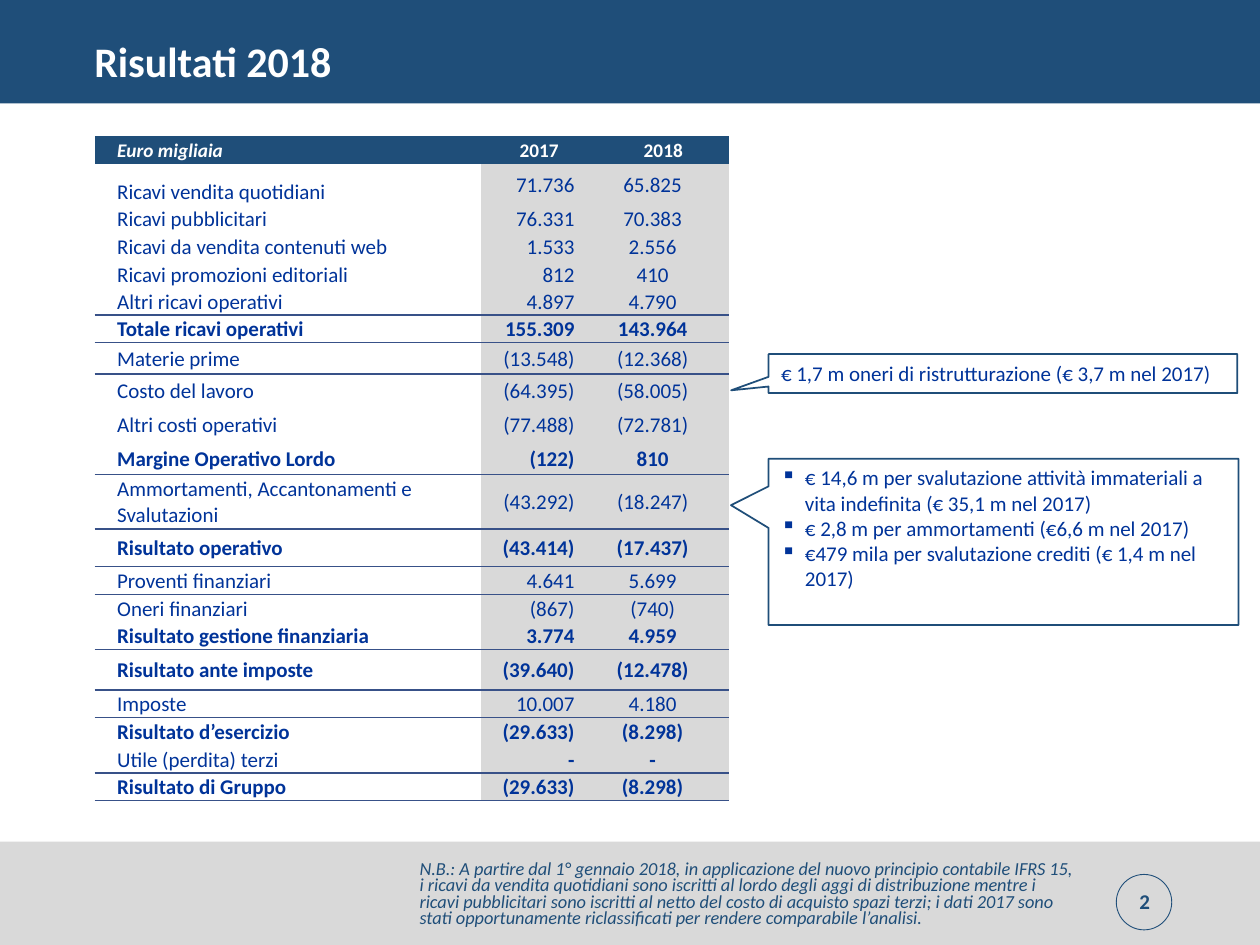
from typing import NamedTuple

import pptx
import pptx.dml.color
import pptx.enum.shapes
import pptx.enum.text
import pptx.oxml
import pptx.oxml.ns
import pptx.util
from pptx.util import Inches

RGBColor = pptx.dml.color.RGBColor
Align = pptx.enum.text.PP_ALIGN
Anchor = pptx.enum.text.MSO_ANCHOR
Shape = pptx.enum.shapes.MSO_SHAPE

NAVY = RGBColor(0x1F, 0x4E, 0x79)
BLUE = RGBColor(0x00, 0x33, 0x99)
RULE = RGBColor(0x38, 0x51, 0x88)
GREY = RGBColor(0xD9, 0xD9, 0xD9)
WHITE = RGBColor(0xFF, 0xFF, 0xFF)
FONT = "Calibri"
NO_STYLE = "{2D5ABB26-0587-4C30-8999-92F81FD0307C}"


class Box(NamedTuple):
    left: float
    top: float
    width: float
    height: float

    def lengths(self) -> list:
        return [Inches(value) for value in self]


class Entry(NamedTuple):
    label: str
    y2017: str
    y2018: str
    height: float = 0.22
    bold: bool = False
    ruled: bool = False  # line under the row
    bold_values: bool = False


class Callout(NamedTuple):
    box: Box
    tip: tuple
    lines: list
    bulleted: bool


ENTRIES = [
    Entry("Ricavi vendita quotidiani", "71.736", "65.825", 0.33),
    Entry("Ricavi pubblicitari", "76.331", "70.383"),
    Entry("Ricavi da vendita contenuti web", "1.533", "2.556"),
    Entry("Ricavi promozioni editoriali", "812", "410"),
    Entry("Altri ricavi operativi", "4.897", "4.790", 0.21, ruled=True),
    Entry("Totale ricavi operativi", "155.309", "143.964", bold=True, ruled=True),
    Entry("Materie prime", "(13.548)", "(12.368)", 0.25),
    Entry("Costo del lavoro", "(64.395)", "(58.005)", 0.27),
    Entry("Altri costi operativi", "(77.488)", "(72.781)", 0.27),
    Entry("Margine Operativo Lordo", "(122)", "810", 0.26, True, True),
    Entry("Ammortamenti, Accantonamenti e Svalutazioni", "(43.292)", "(18.247)", 0.43, ruled=True),
    Entry("Risultato operativo", "(43.414)", "(17.437)", 0.3, True, True),
    Entry("Proventi finanziari", "4.641", "5.699"),
    Entry("Oneri finanziari", "(867)", "(740)"),
    Entry("Risultato gestione finanziaria", "3.774", "4.959", bold=True, ruled=True),
    Entry("Risultato ante imposte", "(39.640)", "(12.478)", 0.32, True, True),
    Entry("Imposte", "10.007", "4.180"),
    Entry("Risultato d’esercizio", "(29.633)", "(8.298)", bold=True),
    Entry("Utile (perdita) terzi", "-", "-", ruled=True, bold_values=True),
    Entry("Risultato di Gruppo", "(29.633)", "(8.298)", bold=True, ruled=True),
]

CALLOUTS = [
    Callout(Box(6.1, 3.64, 3.73, 1.32), (-0.58, -0.22), [
        "€ 14,6 m per svalutazione attività immateriali a vita indefinita (€ 35,1 m nel 2017)",
        "€ 2,8 m per ammortamenti (€6,6 m nel 2017)",
        "€479 mila per svalutazione crediti (€ 1,4 m nel 2017)",
    ], True),
    Callout(Box(6.1, 2.81, 3.72, 0.31), (-0.58, 0.43),
            ["€ 1,7 m oneri di ristrutturazione (€ 3,7 m nel 2017)"], False),
]

NOTE = ("N.B.: A partire dal 1° gennaio 2018, in applicazione del nuovo principio contabile "
        "IFRS 15, i ricavi da vendita quotidiani sono iscritti al lordo degli aggi di "
        "distribuzione mentre i ricavi pubblicitari sono iscritti al netto del costo di "
        "acquisto spazi terzi; i dati 2017 sono stati opportunamente riclassificati per "
        "rendere comparabile l’analisi.")


def write(paragraph, words: str, size: float, color: RGBColor, bold: bool = False,
          italic: bool = False, align=Align.LEFT) -> None:
    paragraph.alignment = align
    run = paragraph.add_run()
    run.text = words
    font = run.font
    font.name, font.size = FONT, pptx.util.Pt(size)
    font.bold, font.italic = bold, italic
    font.color.rgb = color


def add_text(slide, box: Box, words: str, size: float, color: RGBColor, spacing: float = 1.0,
             anchor=Anchor.MIDDLE, **style):
    frame = slide.shapes.add_textbox(*box.lengths()).text_frame
    frame.word_wrap = True
    frame.vertical_anchor = anchor
    frame.paragraphs[0].line_spacing = spacing
    write(frame.paragraphs[0], words, size, color, **style)
    return frame


def add_outline(slide, kind, box: Box, fill=None, line=None, weight: float = 1):
    shape = slide.shapes.add_shape(kind, *box.lengths())
    shape.shadow.inherit = False
    if fill is None:
        shape.fill.background()
    else:
        shape.fill.solid()
        shape.fill.fore_color.rgb = fill
    if line is None:
        shape.line.fill.background()
    else:
        shape.line.color.rgb = line
        shape.line.width = pptx.util.Pt(weight)
    return shape


def add_bullet(paragraph) -> None:
    properties = paragraph._p.get_or_add_pPr()
    properties.set("marL", str(Inches(0.19)))
    properties.set("indent", str(-Inches(0.19)))
    bullet = pptx.oxml.parse_xml(f'<a:buChar {pptx.oxml.ns.nsdecls("a")} char="▪"/>')
    properties.append(bullet)


def add_callout(slide, callout: Callout) -> None:
    shape = add_outline(slide, Shape.RECTANGULAR_CALLOUT, callout.box, WHITE, NAVY)
    shape.adjustments[0], shape.adjustments[1] = callout.tip
    frame = shape.text_frame
    frame.word_wrap = True
    frame.vertical_anchor = Anchor.TOP
    for index, line in enumerate(callout.lines):
        paragraph = frame.paragraphs[0] if index == 0 else frame.add_paragraph()
        if callout.bulleted:
            add_bullet(paragraph)
        write(paragraph, line, 12, BLUE)


def add_rule(cell, side: str) -> None:
    """Draw a cell border; side is lnT or lnB, and must come before the fill."""
    cell._tc.get_or_add_tcPr().append(pptx.oxml.parse_xml(
        f'<a:{side} {pptx.oxml.ns.nsdecls("a")} w="{pptx.util.Pt(1)}"><a:solidFill>'
        f'<a:srgbClr val="{RULE}"/></a:solidFill></a:{side}>'))


def fill_cell(cell, fill: RGBColor, left: float, right: float) -> None:
    cell.fill.solid()
    cell.fill.fore_color.rgb = fill
    cell.vertical_anchor = Anchor.MIDDLE
    cell.margin_left, cell.margin_right = Inches(left), Inches(right)
    cell.margin_top, cell.margin_bottom = Inches(0.01), 0


def add_results(slide) -> None:
    table = slide.shapes.add_table(len(ENTRIES) + 1, 3, *Box(0.75, 1.08, 5.04, 5.34).lengths()).table
    table.first_row = table.horz_banding = False
    table._tbl.tblPr.find(pptx.oxml.ns.qn("a:tableStyleId")).text = NO_STYLE
    for column, width in zip(table.columns, (3.07, 0.92, 1.05)):
        column.width = Inches(width)

    table.rows[0].height = Inches(0.22)
    for column, heading in enumerate(("Euro migliaia", "2017", "2018")):
        cell = table.cell(0, column)
        fill_cell(cell, NAVY, 0.01 if column else 0.18, 0.01)
        write(cell.text_frame.paragraphs[0], heading, 11, WHITE, True, column == 0,
              Align.CENTER if column else Align.LEFT)

    ruled_above = False
    for row, entry in enumerate(ENTRIES, 1):
        table.rows[row].height = Inches(entry.height)
        values = (entry.label, entry.y2017, entry.y2018)
        for column, (value, align) in enumerate(zip(values, (Align.LEFT, Align.RIGHT, Align.CENTER))):
            cell = table.cell(row, column)
            if ruled_above:
                add_rule(cell, "lnT")
            if entry.ruled:
                add_rule(cell, "lnB")
            fill_cell(cell, GREY if column else WHITE, *((0.01, 0.18) if column else (0.18, 0.01)))
            bold = entry.bold or (entry.bold_values and column > 0)
            write(cell.text_frame.paragraphs[0], value, 12, BLUE, bold, align=align)
        ruled_above = entry.ruled
    table.cell(1, 0).vertical_anchor = Anchor.BOTTOM


def main() -> None:
    deck = pptx.Presentation()
    deck.slide_width, deck.slide_height = Inches(10), Inches(7.5)
    slide = deck.slides.add_slide(deck.slide_layouts[6])
    add_outline(slide, Shape.RECTANGLE, Box(0, 6.68, 10, 0.82), GREY)
    add_outline(slide, Shape.FLOWCHART_CONNECTOR, Box(8.86, 6.94, 0.44, 0.44), line=NAVY, weight=0.5)
    add_outline(slide, Shape.RECTANGLE, Box(0, 0, 10, 0.82), NAVY)
    add_text(slide, Box(0.65, 0.2, 8.62, 0.62), "Risultati 2018", 24, WHITE, 0.9, bold=True)
    add_text(slide, Box(8.86, 6.95, 0.45, 0.4), "2", 12, NAVY, bold=True, align=Align.CENTER)
    add_results(slide)
    for callout in CALLOUTS:
        add_callout(slide, callout)
    note = add_text(slide, Box(3.33, 6.84, 5.31, 0.54), NOTE, 10.5, NAVY, 0.75, Anchor.TOP, italic=True)
    note.margin_left = note.margin_top = note.margin_bottom = 0
    deck.save("out.pptx")


if __name__ == "__main__":
    main()
